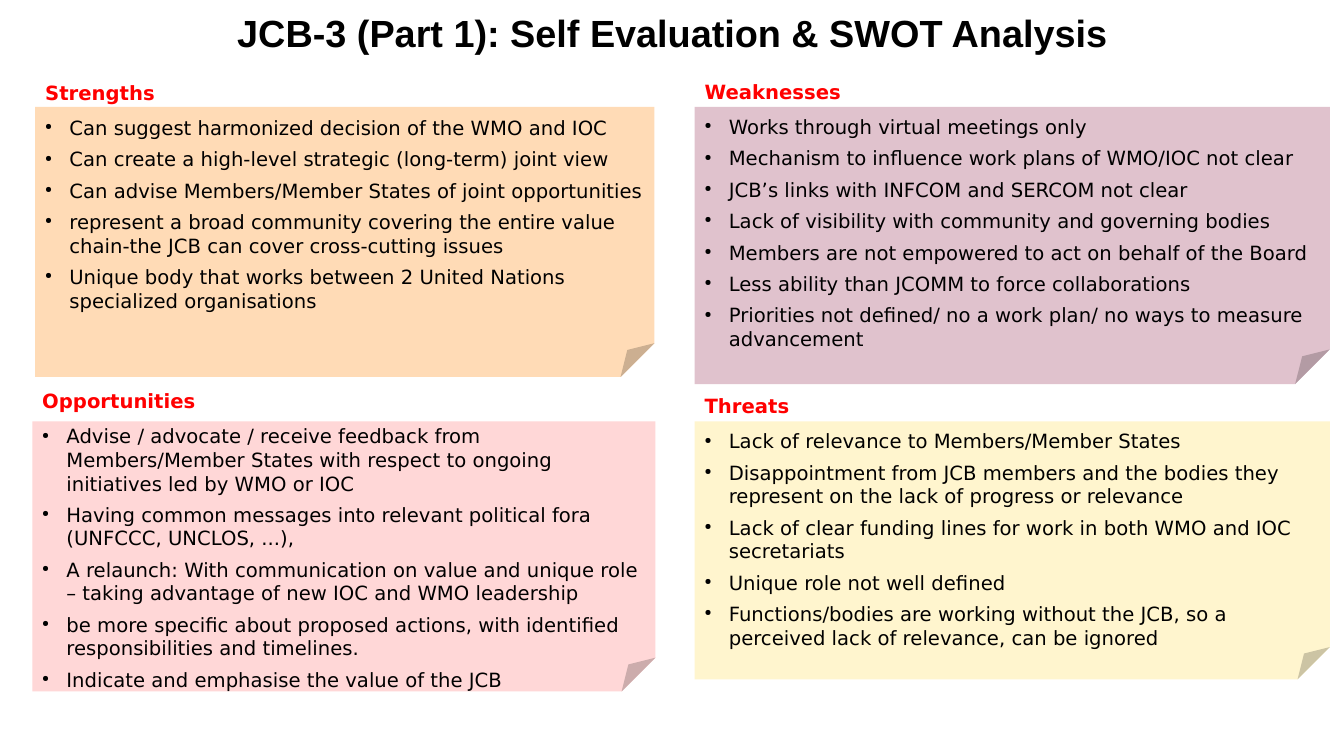
from lxml import etree
from pptx import Presentation
from pptx.dml.color import RGBColor
from pptx.enum import shapes, text
from pptx.oxml import ns
from pptx.util import Inches, Pt

TITLE = "JCB-3 (Part 1): Self Evaluation & SWOT Analysis"

# Heading, fill, (left, top, width, height), inset above the first bullet, bullets
NOTES = [
    ("Strengths", "FFDBB6", (0.35, 1.06, 6.14, 2.68), 0.09, [
        "Can suggest harmonized decision of the WMO and IOC",
        "Can create a high-level strategic (long-term) joint view",
        "Can advise Members/Member States of joint opportunities",
        "represent a broad community covering the entire value chain-the JCB can "
        "cover cross-cutting issues",
        "Unique body that works between 2 United Nations specialized organisations",
    ]),
    ("Weaknesses", "E0C2CD", (6.89, 1.06, 6.3, 2.75), 0.08, [
        "Works through virtual meetings only",
        "Mechanism to influence work plans of WMO/IOC not clear",
        "JCB’s links with INFCOM and SERCOM not clear",
        "Lack of visibility with community and governing bodies",
        "Members are not empowered to act on behalf of the Board",
        "Less ability than JCOMM to force collaborations",
        "Priorities not defined/ no a work plan/ no ways to measure advancement",
    ]),
    ("Opportunities", "FFD7D7", (0.32, 4.18, 6.18, 2.68), 0.03, [
        "Advise / advocate / receive feedback from Members/Member States with "
        "respect to ongoing initiatives led by WMO or IOC",
        "Having common messages into relevant political fora (UNFCCC, UNCLOS, ...),",
        "A relaunch: With communication on value and unique role – taking "
        "advantage of new IOC and WMO leadership",
        "be more specific about proposed actions, with identified "
        "responsibilities and timelines.",
        "Indicate and emphasise the value of the JCB",
    ]),
    ("Threats", "FFF5CE", (6.89, 4.18, 6.3, 2.56), 0.08, [
        "Lack of relevance to Members/Member States",
        "Disappointment from JCB members and the bodies they represent on the "
        "lack of progress or relevance",
        "Lack of clear funding lines for work in both WMO and IOC secretariats",
        "Unique role not well defined",
        "Functions/bodies are working without the JCB, so a perceived lack of "
        "relevance, can be ignored",
    ]),
]
HEADING_RISE = 0.35  # from the top of the heading to the top of the first bullet
HEADING_HEIGHT = 0.25


def color(value):
    return RGBColor.from_string(value)


def set_fold(note, share):
    guides = note._element.spPr.find(ns.qn("a:prstGeom")).get_or_add_avLst()
    etree.SubElement(guides, ns.qn("a:gd"), name="adj",
                     fmla=f"val {round(share * 100000)}")


def add_bullet(para):
    props = para._p.get_or_add_pPr()
    props.set("marL", str(Inches(0.24)))
    props.set("indent", str(Inches(-0.24)))
    tint = etree.SubElement(props, ns.qn("a:buClr"))
    etree.SubElement(tint, ns.qn("a:srgbClr"), val="000000")
    etree.SubElement(props, ns.qn("a:buSzPct"), val="45000")
    etree.SubElement(props, ns.qn("a:buChar"), char="●")


def write(box, lines, font="DejaVu Sans", size=14, ink="000000", bold=False,
          align=text.PP_ALIGN.LEFT, bullets=False, top=0, bottom=0):
    frame = box.text_frame
    frame.word_wrap = True
    frame.vertical_anchor = text.MSO_ANCHOR.TOP
    frame.margin_left = frame.margin_right = Inches(0.1)
    frame.margin_top, frame.margin_bottom = Inches(top), Inches(bottom)
    for index, line in enumerate(lines):
        para = frame.add_paragraph() if index else frame.paragraphs[0]
        para.alignment = align
        if bullets:
            para.space_before = Pt(2.8 if index else 0)
            para.space_after = Pt(2.8)
            add_bullet(para)
        span = para.add_run()
        span.text = line
        span.font.name, span.font.size = font, Pt(size)
        span.font.bold = bold
        span.font.color.rgb = color(ink)


deck = Presentation()
deck.slide_width, deck.slide_height = Inches(13.33), Inches(7.5)
page = deck.slides.add_slide(deck.slide_layouts[6])

# Four folded notes, each with its heading above
for heading, fill, (left, top, width, height), inset, bullets in NOTES:
    note = page.shapes.add_shape(
        shapes.MSO_SHAPE.FOLDED_CORNER, *map(Inches, (left, top, width, height)))
    set_fold(note, 0.125)
    note.shadow.inherit = False
    note.fill.solid()
    note.fill.fore_color.rgb = color(fill)
    note.line.fill.background()
    write(note, bullets, bullets=True, top=inset)

    label = page.shapes.add_textbox(
        *map(Inches, (left, top + inset - HEADING_RISE, width, HEADING_HEIGHT)))
    write(label, [heading], ink="FF0000", bold=True)

# Title
title = page.shapes.add_textbox(*map(Inches, (0.09, 0, 13.16, 0.66)))
write(title, [TITLE], font="Arial", size=27, bold=True,
      align=text.PP_ALIGN.CENTER, top=0.1, bottom=0.1)

deck.save("out.pptx")
